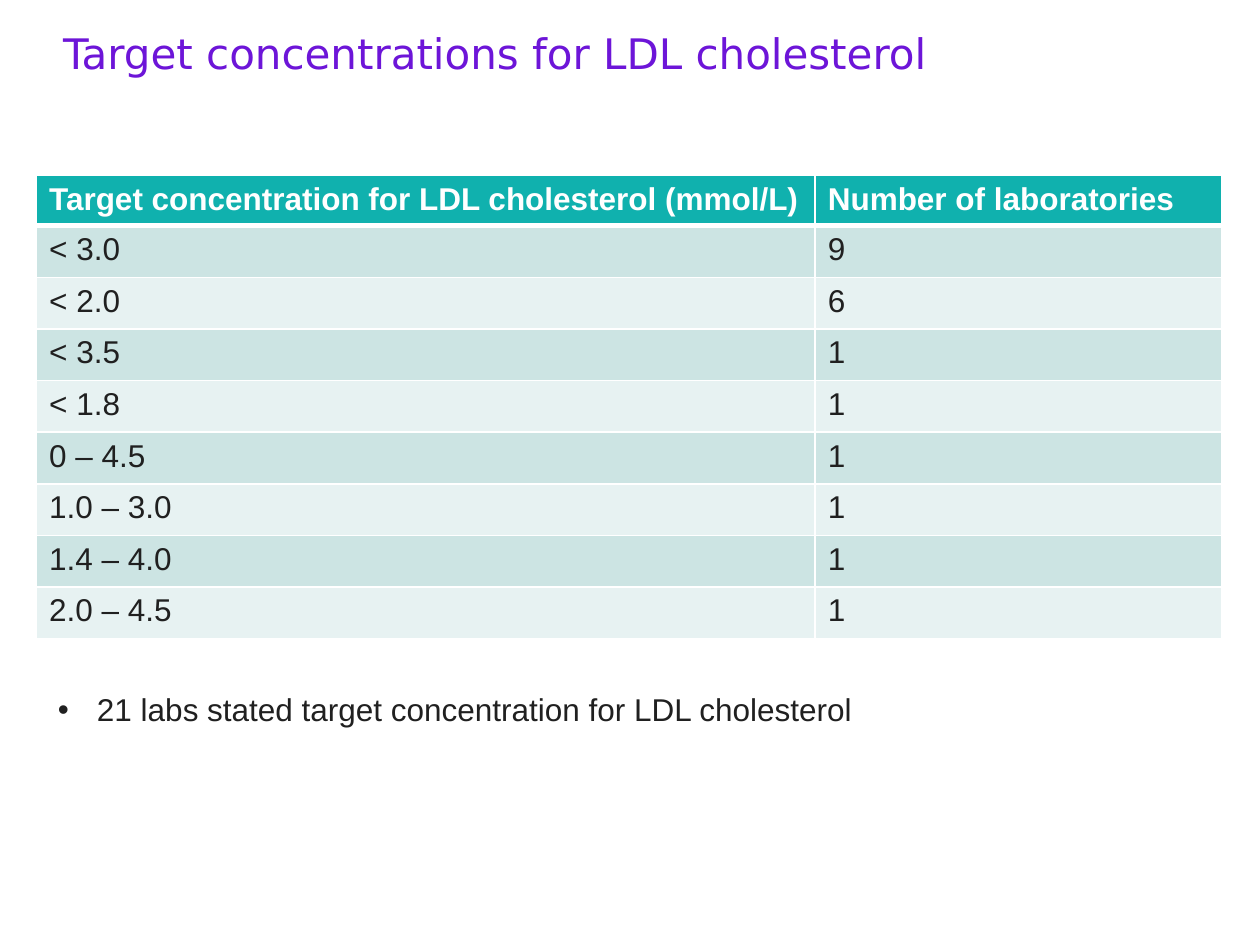
import pptx
import pptx.util
import pptx.dml.color
import pptx.enum.text
import pptx.oxml.ns
import lxml.etree

Inches, Pt = pptx.util.Inches, pptx.util.Pt

TITLE = "Target concentrations for LDL cholesterol"
NOTE = "21 labs stated target concentration for LDL cholesterol"
ROWS = [
    ("Target concentration for LDL cholesterol (mmol/L)", "Number of laboratories"),
    ("< 3.0", "9"),
    ("< 2.0", "6"),
    ("< 3.5", "1"),
    ("< 1.8", "1"),
    ("0 – 4.5", "1"),
    ("1.0 – 3.0", "1"),
    ("1.4 – 4.0", "1"),
    ("2.0 – 4.5", "1"),
]
THEME = {
    "title": ("DejaVu Sans", 24, "6D15D8", False),
    "head": ("Arial", 18, "FFFFFF", True),
    "text": ("Arial", 18, "202020", False),
    "fills": ("E7F2F2", "CCE4E3"),
    "top": "10B1AE",
    "rule": "FFFFFF",
}
WIDTHS = (6.18, 3.23)
HEAD, BODY = 0.39, 0.41


def color(code):
    return pptx.dml.color.RGBColor.from_string(code)


def write(frame, text, style):
    run = frame.paragraphs[0].add_run()
    run.text = text
    font = run.font
    font.name, size, code, font.bold = THEME[style]
    font.size = Pt(size)
    font.color.rgb = color(code)


def place(shape, left, top, width, height):
    shape.left, shape.top = Inches(left), Inches(top)
    shape.width, shape.height = Inches(width), Inches(height)


def border(cell, row):
    props = cell._tc.get_or_add_tcPr()
    thick = {(0, "B"), (1, "T")}
    for spot, side in enumerate("LRTB"):
        line = lxml.etree.Element(pptx.oxml.ns.qn("a:ln" + side))
        line.set("w", str(Pt(3 if (row, side) in thick else 1)))
        fill = lxml.etree.SubElement(line, pptx.oxml.ns.qn("a:solidFill"))
        tint = lxml.etree.SubElement(fill, pptx.oxml.ns.qn("a:srgbClr"))
        tint.set("val", THEME["rule"])
        props.insert(spot, line)


def add_title(slide):
    shape = slide.shapes.title
    place(shape, 0.5, 0.26, 9, 0.74)
    frame = shape.text_frame
    frame.margin_left = frame.margin_right = 0
    frame.margin_top = frame.margin_bottom = 0
    frame.vertical_anchor = pptx.enum.text.MSO_ANCHOR.TOP
    frame.auto_size = pptx.enum.text.MSO_AUTO_SIZE.NONE
    para = frame.paragraphs[0]
    para.alignment = pptx.enum.text.PP_ALIGN.LEFT
    para.line_spacing = 0.92
    write(frame, TITLE, "title")


def add_grid(slide):
    high = HEAD + BODY * (len(ROWS) - 1)
    table = slide.shapes.add_table(
        len(ROWS), len(WIDTHS), Inches(0.29), Inches(1.39),
        Inches(sum(WIDTHS)), Inches(high)).table
    for col, width in zip(table.columns, WIDTHS):
        col.width = Inches(width)
    for row, texts in enumerate(ROWS):
        table.rows[row].height = Inches(BODY if row else HEAD)
        for col, text in enumerate(texts):
            cell = table.cell(row, col)
            cell.fill.solid()
            cell.fill.fore_color.rgb = color(
                THEME["fills"][row % 2] if row else THEME["top"])
            border(cell, row)
            write(cell.text_frame, text, "text" if row else "head")


def add_note(slide):
    shape = slide.placeholders[1]
    place(shape, 0.36, 5.43, 8.73, 0.4)
    frame = shape.text_frame
    frame.auto_size = pptx.enum.text.MSO_AUTO_SIZE.SHAPE_TO_FIT_TEXT
    para = frame.paragraphs[0]
    para.space_before = Pt(0)
    write(frame, NOTE, "text")
    props = para._p.get_or_add_pPr()
    props.set("marL", str(Inches(0.31)))
    props.set("indent", str(Inches(-0.31)))
    mark = lxml.etree.SubElement(props, pptx.oxml.ns.qn("a:buChar"))
    mark.set("char", "•")


def main():
    deck = pptx.Presentation()
    deck.slide_width, deck.slide_height = Inches(10), Inches(7.5)
    slide = deck.slides.add_slide(deck.slide_layouts[1])
    add_title(slide)
    add_grid(slide)
    add_note(slide)
    deck.save("out.pptx")


if __name__ == "__main__":
    main()
